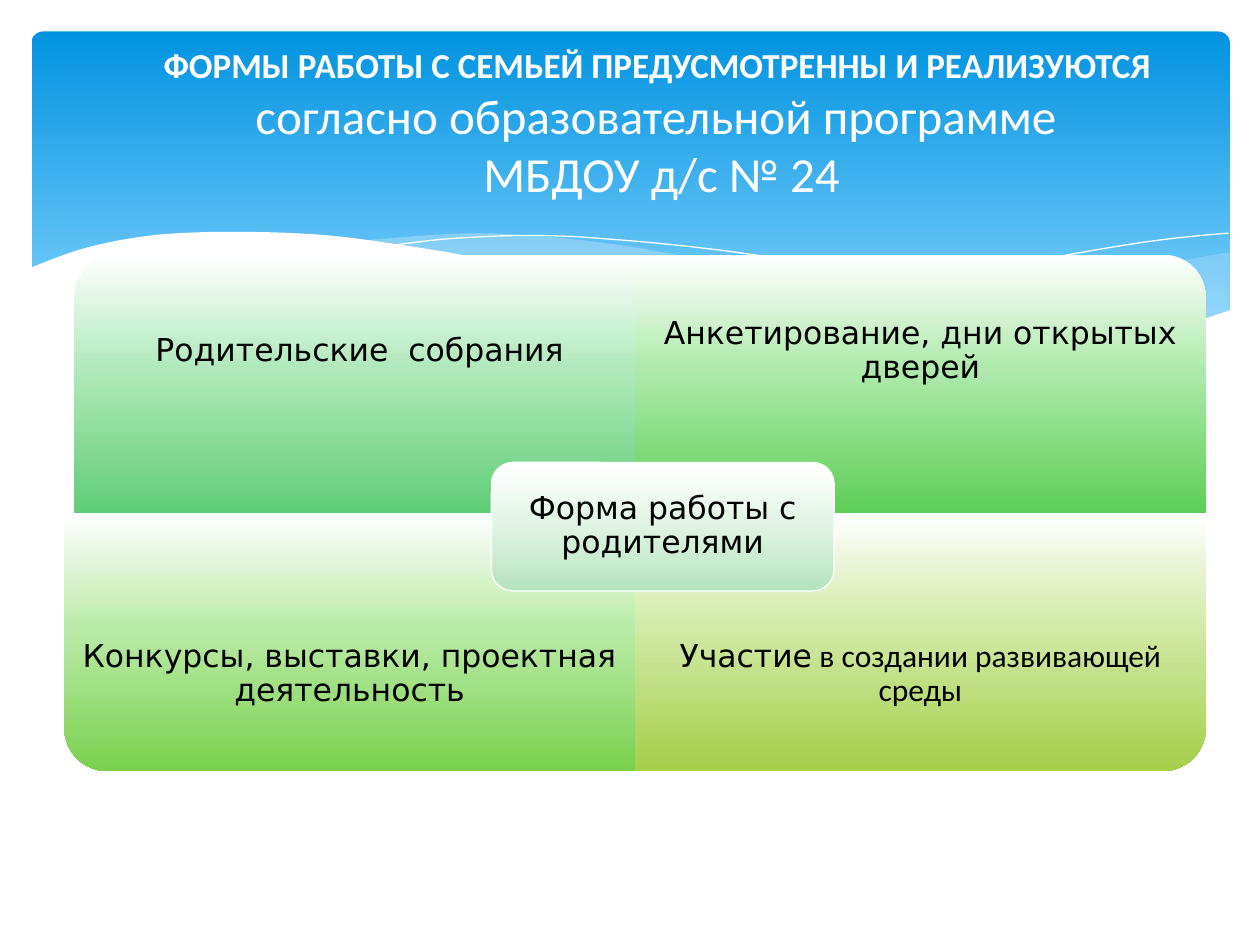
from pptx import Presentation
from pptx import util as u
from pptx.dml.color import RGBColor
from pptx.enum import shapes, text
from pptx.oxml import parse_xml
from pptx.oxml.ns import nsdecls

WHITE = RGBColor(0xFF, 0xFF, 0xFF)
BLACK = RGBColor(0, 0, 0)
PALE_BLUE = RGBColor(0xC6, 0xE7, 0xFC)
BLUE = RGBColor(0x02, 0x93, 0xE0)
LIGHT_BLUE = RGBColor(0x83, 0xD3, 0xFE)
SEA_MID, SEA_END = RGBColor(0xB1, 0xE9, 0xBB), RGBColor(0x61, 0xCD, 0x78)
GREEN_MID, GREEN_END = RGBColor(0xAF, 0xEA, 0xAC), RGBColor(0x5E, 0xCF, 0x57)
GRASS_MID, GRASS_END = RGBColor(0xBB, 0xEB, 0xA9), RGBColor(0x7A, 0xD1, 0x4E)
LIME_MID, LIME_END = RGBColor(0xD1, 0xEA, 0xA7), RGBColor(0xA4, 0xCF, 0x4A)
MINT_MID, MINT_END = RGBColor(0xE4, 0xF6, 0xE7), RGBColor(0xB6, 0xE3, 0xBD)
SANS, CALIBRI = "DejaVu Sans", "Calibri"

TITLE_LINES = [
    ("ФОРМЫ РАБОТЫ С СЕМЬЕЙ ПРЕДУСМОТРЕННЫ И РЕАЛИЗУЮТСЯ ", 20, True),
    ("согласно образовательной программе ", 28, False),
    ("МБДОУ д/с № 24", 28, False),
]
QUARTERS = [
    {"col": 0, "row": 0, "turn": 270, "shift": 0.08, "colours": (SEA_MID, SEA_END),
     "runs": [("Родительские  собрания", SANS)]},
    {"col": 1, "row": 0, "turn": 0, "shift": 0, "colours": (GREEN_MID, GREEN_END),
     "runs": [("Анкетирование, дни открытых дверей", SANS)]},
    {"col": 0, "row": 1, "turn": 180, "shift": 0, "colours": (GRASS_MID, GRASS_END),
     "runs": [("Конкурсы, выставки, проектная деятельность", SANS)]},
    {"col": 1, "row": 1, "turn": 90, "shift": 0, "colours": (LIME_MID, LIME_END),
     "runs": [("Участие", SANS), (" в создании развивающей среды", CALIBRI)]},
]
CENTER_RUNS = [("Форма работы с родителями", SANS)]

HEADER_BOX = (0.25, 0.25, 9.51, 2.7)
TITLE_BOX = (0.75, 0.29, 9, 1.37)
CENTER_BOX = (3.9, 3.67, 2.72, 1.02)
GRID_LEFT, GRID_TOP = 0.51, 2.02
QUARTER_W, QUARTER_H, LABEL_H = 4.53, 2.05, 1.54

RIGHT_TOP = [(9.76, 2), (9.21, 2.1), (8.61, 2.23), (7.79, 2.42), (7.06, 2.57), (6.61, 2.65)]
RIGHT_BOTTOM = [(6.61, 2.65), (7.32, 2.74), (8.14, 2.78), (8.81, 2.73), (9.35, 2.62), (9.76, 2.47)]
MIDDLE_TOP = [(8.93, 2.73), (8.07, 2.6), (7.06, 2.4), (6.29, 2.22), (5.41, 2.03),
              (4.65, 1.91), (3.8, 1.85), (2.86, 1.91)]
MIDDLE_BOTTOM = [(2.86, 1.91), (3.62, 2.03), (4.49, 2.22), (5.3, 2.4), (6.18, 2.58),
                 (6.95, 2.7), (7.61, 2.77), (8.28, 2.78), (8.93, 2.73)]
LEFT_LINE = [(3.09, 1.95), (3.63, 1.89), (4.33, 1.87), (5.1, 1.92), (5.82, 2),
             (6.65, 2.13), (7.6, 2.33), (8.31, 2.51), (9.07, 2.72)]
RIGHT_LINE = [(6.13, 2.57), (6.95, 2.35), (7.76, 2.16), (8.66, 1.99), (9.24, 1.9), (9.75, 1.85)]
WHITE_EDGE = [(9.77, 2.46), (9.1, 2.67), (8.5, 2.75), (7.78, 2.76), (7.08, 2.7), (6.26, 2.58),
              (5.55, 2.45), (4.75, 2.27), (3.91, 2.07), (3.16, 1.94), (2.5, 1.86), (1.77, 1.84),
              (1.19, 1.87), (0.67, 1.97), (0.23, 2.13)]
WHITE_BASE = [(0.23, 3.29), (9.77, 3.29)]

FILLED, STROKED = True, False
WAVES = [
    ([RIGHT_TOP, RIGHT_BOTTOM], FILLED, PALE_BLUE, 29),
    ([MIDDLE_TOP, MIDDLE_BOTTOM], FILLED, PALE_BLUE, 40),
    ([LEFT_LINE], STROKED, WHITE, 100),
    ([RIGHT_LINE], STROKED, WHITE, 100),
    ([WHITE_EDGE, WHITE_BASE], FILLED, WHITE, 100),
]
STEPS = 6
UNITS_PER_INCH = 1000


def smooth(knots):
    padded = [knots[0], *knots, knots[-1]]
    points = [knots[0]]
    for a, b, c, d in zip(padded, padded[1:], padded[2:], padded[3:]):
        for step in range(1, STEPS + 1):
            t = step / STEPS
            points.append(tuple(
                q + t * (r - p) / 2 + t * t * (2 * p - 5 * q + 4 * r - s) / 2
                + t ** 3 * (3 * q - p - 3 * r + s) / 2
                for p, q, r, s in zip(a, b, c, d)))
    return points


def add_wave(s, edges, filled, colour, opacity):
    outline = [(round(x * UNITS_PER_INCH), round(y * UNITS_PER_INCH))
               for edge in edges for x, y in smooth(edge)]
    builder = s.shapes.build_freeform(*outline[0], scale=u.Inches(1) / UNITS_PER_INCH)
    builder.add_line_segments(outline[1:], close=filled)
    sp = builder.convert_to_shape()
    sp.shadow.inherit = False
    if not filled:
        sp.fill.background()
        sp.line.color.rgb = colour
        sp.line.width = u.Pt(0)
        return
    sp.line.fill.background()
    sp.fill.solid()
    sp.fill.fore_color.rgb = colour
    sp._element.spPr.find("{*}solidFill")[0].append(
        parse_xml(f'<a:alpha {nsdecls("a")} val="{opacity * 1000}"/>'))


def add_gradient_shape(s, kind, box, stops, turn=0):
    sp = s.shapes.add_shape(kind, *map(u.Inches, box))
    sp.shadow.inherit = False
    sp.line.fill.background()
    sp.rotation = turn
    stop_xml = "".join(f'<a:gs pos="{percent * 1000}"><a:srgbClr val="{colour}"/></a:gs>'
                       for percent, colour in stops)
    downward = (90 - turn) % 360 * 60000
    sp._element.spPr.find("{*}prstGeom").addnext(parse_xml(
        f'<a:gradFill {nsdecls("a")} rotWithShape="1"><a:gsLst>{stop_xml}</a:gsLst>'
        f'<a:lin ang="{downward}" scaled="0"/></a:gradFill>'))
    return sp


def fade_from_white(middle, end):
    return [(0, WHITE), (44, middle), (100, end)]


def center_text(sp):
    tf = sp.text_frame
    tf.word_wrap = True
    tf.vertical_anchor = text.MSO_ANCHOR.MIDDLE
    p = tf.paragraphs[0]
    p.alignment = text.PP_ALIGN.CENTER
    return tf, p


def add_run(p, words, font, size, colour, bold=False):
    r = p.add_run()
    r.text = words
    r.font.name, r.font.size, r.font.bold = font, u.Pt(size), bold
    r.font.color.rgb = colour


def write_label(sp, runs, inset):
    tf, p = center_text(sp)
    tf.margin_left = tf.margin_right = tf.margin_top = tf.margin_bottom = u.Inches(inset)
    p.line_spacing = 0.9
    for words, font in runs:
        add_run(p, words, font, 18, BLACK)


def add_header(s):
    header = add_gradient_shape(s, shapes.MSO_SHAPE.ROUNDED_RECTANGLE, HEADER_BOX,
                                [(0, BLUE), (90, LIGHT_BLUE)])
    header.adjustments[0] = 0.034
    for wave in WAVES:
        add_wave(s, *wave)
    _, p = center_text(s.shapes.add_textbox(*map(u.Inches, TITLE_BOX)))
    for i, (words, size, bold) in enumerate(TITLE_LINES):
        if i:
            p.add_line_break()
        add_run(p, words, CALIBRI, size, WHITE, bold)


def add_quarter(s, col, row, turn, shift, colours, runs):
    left = GRID_LEFT + col * QUARTER_W + shift
    top = GRID_TOP + row * QUARTER_H
    sideways = turn in (90, 270)
    w, h = (QUARTER_H, QUARTER_W) if sideways else (QUARTER_W, QUARTER_H)
    box = (left + (QUARTER_W - w) / 2, top + (QUARTER_H - h) / 2, w, h)
    add_gradient_shape(s, shapes.MSO_SHAPE.ROUND_1_RECTANGLE, box,
                       fade_from_white(*colours), turn)
    label_top = top + row * (QUARTER_H - LABEL_H)
    label = s.shapes.add_textbox(*map(u.Inches, (left, label_top, QUARTER_W, LABEL_H)))
    write_label(label, runs, 0.14)


def add_center(s):
    center = add_gradient_shape(s, shapes.MSO_SHAPE.ROUNDED_RECTANGLE, CENTER_BOX,
                                fade_from_white(MINT_MID, MINT_END))
    center.line.color.rgb = WHITE
    center.line.width = u.Pt(0.75)
    write_label(center, CENTER_RUNS, 0.12)


def main():
    prs = Presentation()
    prs.slide_width, prs.slide_height = u.Inches(10), u.Inches(7.5)
    s = prs.slides.add_slide(prs.slide_layouts[6])
    add_header(s)
    for quarter in QUARTERS:
        add_quarter(s, **quarter)
    add_center(s)
    prs.save("out.pptx")


if __name__ == "__main__":
    main()
